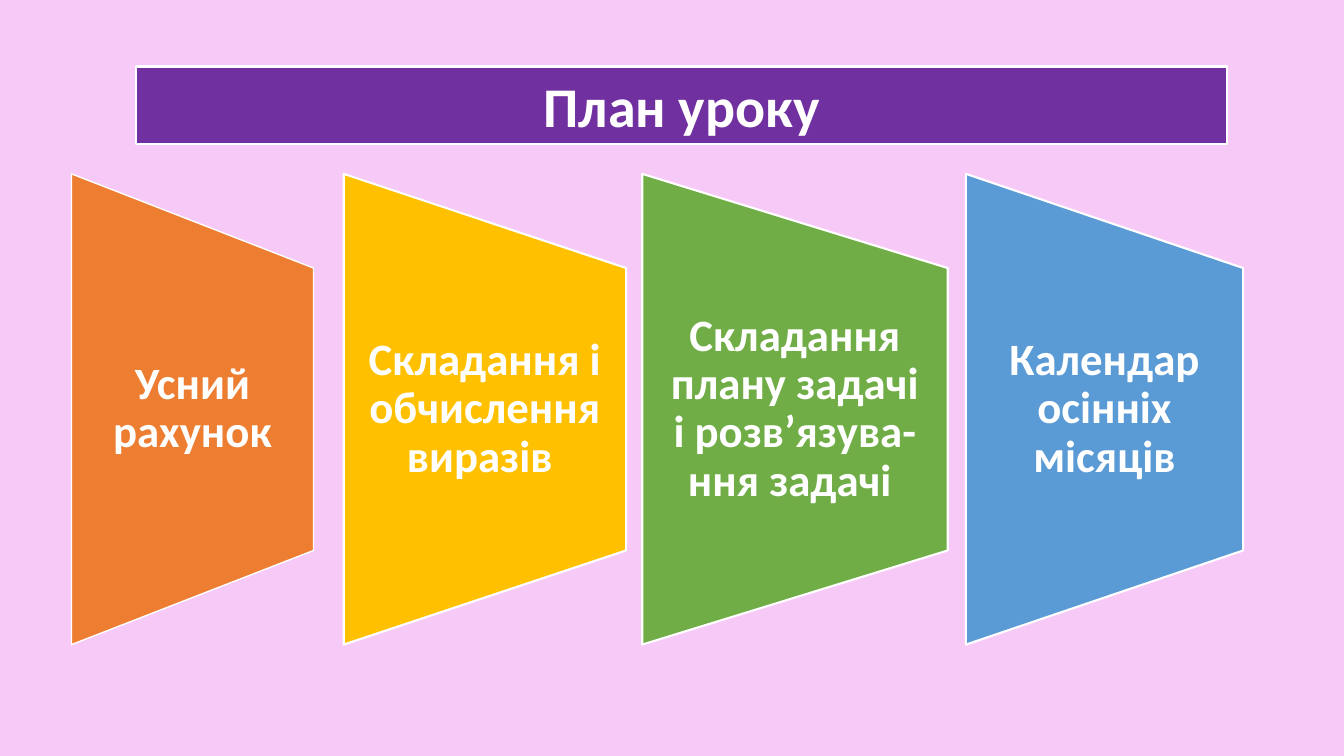
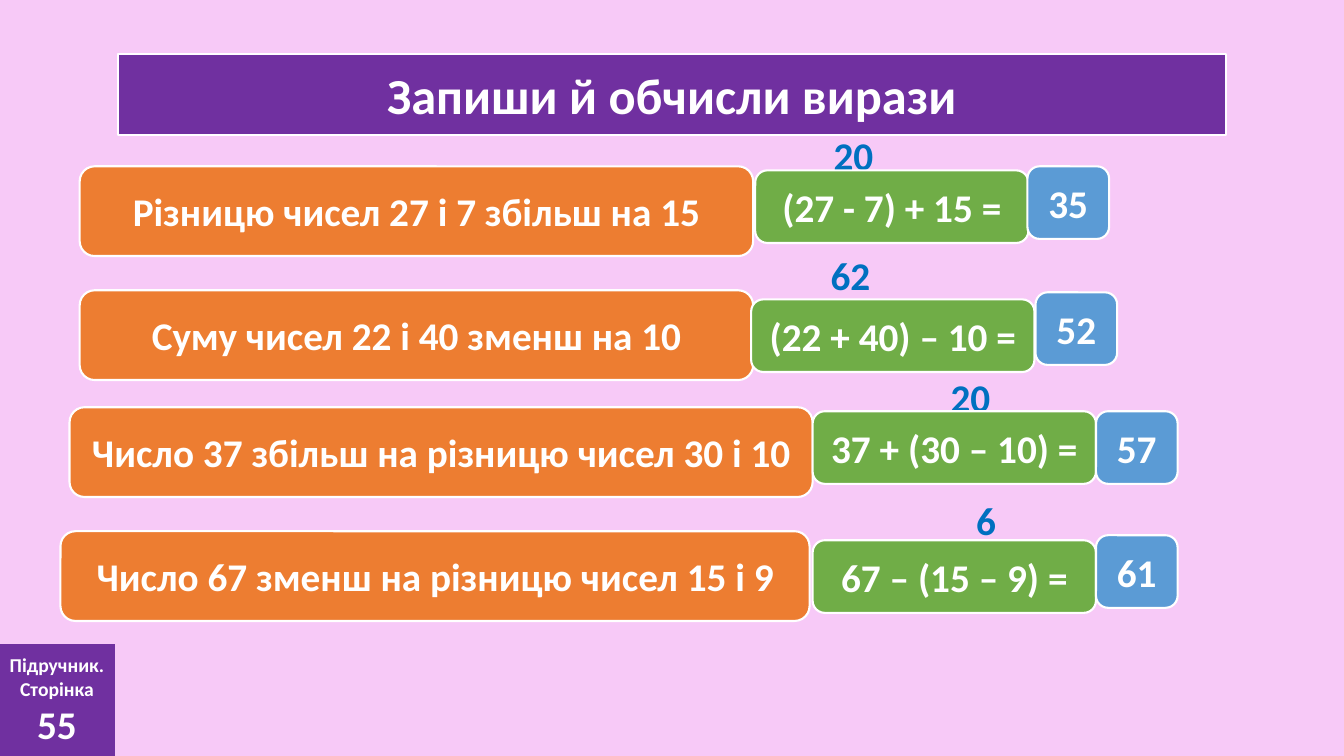
from dataclasses import dataclass

from pptx import Presentation
from pptx.dml.color import RGBColor
from pptx.enum.shapes import MSO_SHAPE as Shape
from pptx.enum.text import MSO_ANCHOR as Anchor, PP_ALIGN as Align
from pptx.util import Inches, Pt


@dataclass(frozen=True)
class Theme:
    font: str = "Calibri"
    background: str = "F7C9F7"
    white: str = "FFFFFF"
    purple: str = "7030A0"
    orange: str = "ED7D31"
    yellow: str = "FFC000"
    green: str = "70AD47"
    blue: str = "5B9BD5"
    hint: str = "0070C0"
    plan_title: int = 40
    task_title: int = 36
    step: int = 32
    body: int = 28
    label: int = 14
    outline: float = 1.5


THEME = Theme()

# Lesson steps: text, left, width, colour, outline
STEPS = [
    ("Усний рахунок", 0.71, 2.4, THEME.orange, 1),
    ("Складання і обчислення виразів ", 3.41, 2.8, THEME.yellow, THEME.outline),
    ("Складання плану задачі і розв’язува-ння задачі ", 6.37, 3.03, THEME.green, THEME.outline),
    ("Календар осінніх місяців", 9.58, 2.75, THEME.blue, THEME.outline),
]
STEP_CENTER, STEP_HEIGHT, STEP_TEXT_HEIGHT = 4.06, 4.67, 2.8

# Each part of a task: text, left, top, width
TASKS = [
    {"hint": ("20", 8.06, 1.18, 0.81),
     "task": ("Різницю чисел 27 і 7 збільш на 15", 0.79, 1.65, 6.68),
     "expression": ("(27 - 7) + 15 =", 7.49, 1.69, 2.71),
     "answer": ("35", 10.19, 1.65, 0.81)},
    {"hint": ("62", 8.03, 2.37, 0.81),
     "task": ("Суму чисел 22 і 40 зменш на 10", 0.79, 2.88, 6.68),
     "expression": ("(22 + 40) – 10 =", 7.45, 2.97, 2.81),
     "answer": ("52", 10.27, 2.9, 0.81)},
    {"hint": ("20", 9.22, 3.58, 0.81),
     "task": ("Число 37 збільш на різницю чисел 30 і 10", 0.69, 4.04, 7.37),
     "expression": ("37 + (30 – 10) =", 8.06, 4.08, 2.81),
     "answer": ("57", 10.87, 4.08, 0.81)},
    {"hint": ("6", 9.53, 4.8, 0.5),
     "task": ("Число 67 зменш на різницю чисел 15 і 9", 0.6, 5.27, 7.43),
     "expression": ("67 – (15 – 9) =", 8.06, 5.36, 2.81),
     "answer": ("61", 10.87, 5.31, 0.81)},
]
# Part of a task: height, fill, text colour
TASK_STYLES = {
    "hint": (0.72, None, THEME.hint),
    "task": (0.89, THEME.orange, THEME.white),
    "expression": (0.72, THEME.green, THEME.white),
    "answer": (0.72, THEME.blue, THEME.white),
}
PAGE_LINES = [("Підручник.", THEME.label), ("Сторінка", THEME.label), ("55", THEME.body)]


def rgb(color):
    return RGBColor.from_string(color)


def write(frame, lines, color=THEME.white):
    """Fill a frame with centred bold lines given as (text, size)."""
    frame.word_wrap = True
    frame.vertical_anchor = Anchor.MIDDLE
    for index, (text, size) in enumerate(lines):
        paragraph = frame.add_paragraph() if index else frame.paragraphs[0]
        paragraph.text = text
        paragraph.alignment = Align.CENTER
        font = paragraph.font
        font.name, font.size, font.bold = THEME.font, Pt(size), True
        font.color.rgb = rgb(color)


def add_block(slide, preset, box, fill=None, outline=THEME.outline):
    block = slide.shapes.add_shape(preset, *map(Inches, box))
    block.shadow.inherit = False
    if fill:
        block.fill.solid()
        block.fill.fore_color.rgb = rgb(fill)
    else:
        block.fill.background()
    if fill and outline:
        block.line.color.rgb = rgb(THEME.white)
        block.line.width = Pt(outline)
    else:
        block.line.fill.background()
    return block


def add_titled_slide(deck, title, box, size):
    slide = deck.slides.add_slide(deck.slide_layouts[6])
    slide.background.fill.solid()
    slide.background.fill.fore_color.rgb = rgb(THEME.background)
    band = add_block(slide, Shape.RECTANGLE, box, THEME.purple)
    write(band.text_frame, [(title, size)])
    return slide


def add_step(slide, text, left, width, color, outline):
    """Draw a trapezoid turned on its side, with upright text over it."""
    turned_box = (left + (width - STEP_HEIGHT) / 2, STEP_CENTER - width / 2, STEP_HEIGHT, width)
    panel = add_block(slide, Shape.FLOWCHART_MANUAL_OPERATION, turned_box, color, outline)
    panel.rotation = 270
    text_box = (left, STEP_CENTER - STEP_TEXT_HEIGHT / 2, width, STEP_TEXT_HEIGHT)
    frame = slide.shapes.add_textbox(*map(Inches, text_box)).text_frame
    frame.margin_left = frame.margin_right = Inches(0.22)
    frame.margin_top = frame.margin_bottom = 0
    write(frame, [(text, THEME.step)])
    frame.paragraphs[0].line_spacing = 0.9


def build_plan(deck):
    slide = add_titled_slide(deck, "План уроку", (1.35, 0.66, 10.82, 0.77), THEME.plan_title)
    for step in STEPS:
        add_step(slide, *step)


def build_tasks(deck):
    slide = add_titled_slide(deck, "Запиши й обчисли вирази", (1.17, 0.54, 10.99, 0.8),
                             THEME.task_title)
    for task in TASKS:
        for part, (text, left, top, width) in task.items():
            height, fill, color = TASK_STYLES[part]
            block = add_block(slide, Shape.ROUNDED_RECTANGLE, (left, top, width, height), fill)
            write(block.text_frame, [(text, THEME.body)], color)
    page = add_block(slide, Shape.RECTANGLE, (-0.01, 6.39, 1.15, 1.11), THEME.purple, outline=0)
    write(page.text_frame, PAGE_LINES)


def main():
    deck = Presentation()
    deck.slide_width, deck.slide_height = Inches(13.33), Inches(7.5)
    build_plan(deck)
    build_tasks(deck)
    deck.save("out.pptx")


if __name__ == "__main__":
    main()
